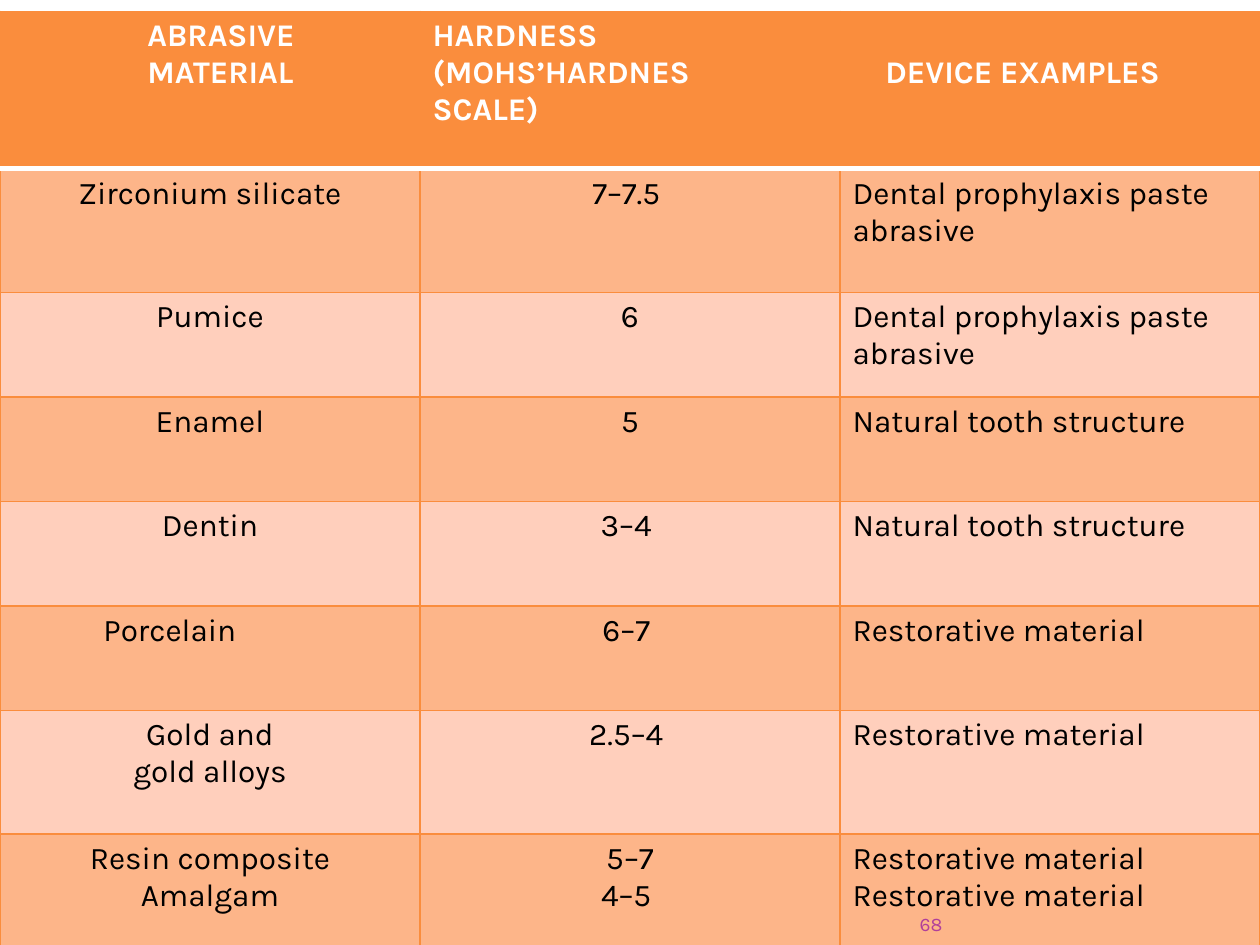
from dataclasses import dataclass

from lxml.etree import SubElement
from pptx import Presentation
from pptx.dml.color import RGBColor
from pptx.enum.text import MSO_ANCHOR, PP_ALIGN
from pptx.oxml.ns import qn
from pptx.util import Inches, Pt


@dataclass(frozen=True)
class Theme:
    font: str = "Karla"
    orange: str = "FA8D3D"
    dark_band: str = "FDB589"
    light_band: str = "FFCFBC"
    white: str = "FFFFFF"
    black: str = "000000"
    purple: str = "B13F9A"
    table_size: float = 18
    number_size: float = 11
    grid_width: float = 0.9
    header_rule: float = 3.15


THEME = Theme()
HEADINGS = ["ABRASIVE\nMATERIAL", "HARDNESS\n(MOHS’HARDNES\nSCALE)", "DEVICE EXAMPLES"]
HEADING_INDENTS = [1.07, 0, 0.26]
PASTE = "Dental prophylaxis paste abrasive"
TOOTH = "Natural tooth structure"
RESTORATIVE = "Restorative material"
MATERIALS = [
    ("Zirconium silicate", "7–7.5 ", PASTE),
    ("Pumice", "6", PASTE),
    ("Enamel", "5", TOOTH),
    ("Dentin", "3–4 ", TOOTH),
    ("Porcelain", "6–7 ", RESTORATIVE),
    ("Gold and\ngold alloys", "2.5–4 ", RESTORATIVE),
    ("Resin composite\nAmalgam", "5–7\n4–5 ", f"{RESTORATIVE}\n{RESTORATIVE}"),
]
ROW_HEIGHTS = [1.25, 0.98, 0.83, 0.83, 0.83, 0.83, 0.98, 0.98]
PORCELAIN_INDENT = 0.72
HEADING_LINE = 0.29


def style_text(text_frame, size, color, bold=False, align=PP_ALIGN.LEFT, indent=0):
    for paragraph in text_frame.paragraphs:
        paragraph.alignment = align
        if indent:
            paragraph._p.get_or_add_pPr().set("marL", str(Inches(indent)))
        for run in paragraph.runs:
            run.font.name = THEME.font
            run.font.size = Pt(size)
            run.font.bold = bold
            run.font.color.rgb = RGBColor.from_string(color)


def draw_borders(cell, row):
    properties = cell._tc.get_or_add_tcPr()
    for side in "LRTB":
        under_header = (row, side) in ((0, "B"), (1, "T"))
        width = THEME.header_rule if under_header else THEME.grid_width
        border = SubElement(properties, qn(f"a:ln{side}"), w=str(Pt(width)))
        fill = SubElement(border, qn("a:solidFill"))
        color = THEME.white if under_header else THEME.orange
        SubElement(fill, qn("a:srgbClr"), val=color)


def fill_cell(cell, row, column, content):
    draw_borders(cell, row)
    cell.fill.solid()
    cell.text_frame.text = content
    if row == 0:
        band = THEME.orange
        style_text(cell.text_frame, THEME.table_size, THEME.white, True,
                   indent=HEADING_INDENTS[column])
        if column == 2:
            cell.margin_top = Inches(0.05 + HEADING_LINE)
    else:
        band = THEME.dark_band if row % 2 else THEME.light_band
        indent = PORCELAIN_INDENT if content == "Porcelain" else 0
        align = PP_ALIGN.LEFT if indent or column == 2 else PP_ALIGN.CENTER
        style_text(cell.text_frame, THEME.table_size, THEME.black, align=align, indent=indent)
    cell.fill.fore_color.rgb = RGBColor.from_string(band)


def add_hardness_table(slide, left, top, width, height):
    rows = [HEADINGS, *MATERIALS]
    table = slide.shapes.add_table(len(rows), len(HEADINGS), left, top, width, height).table
    for column in table.columns:
        column.width = int(width / len(HEADINGS))
    for row, (contents, row_height) in enumerate(zip(rows, ROW_HEIGHTS)):
        table.rows[row].height = Inches(row_height)
        for column, content in enumerate(contents):
            fill_cell(table.cell(row, column), row, column, content)


def add_slide_number(slide, left, top, width, height):
    number = slide.shapes.add_textbox(left, top, width, height).text_frame
    number.margin_left = number.margin_right = number.margin_top = number.margin_bottom = 0
    number.word_wrap = True
    number.vertical_anchor = MSO_ANCHOR.BOTTOM
    number.text = "68"
    style_text(number, THEME.number_size, THEME.purple, align=PP_ALIGN.RIGHT)


def main():
    presentation = Presentation()
    presentation.slide_width = Inches(10)
    presentation.slide_height = Inches(7.5)
    slide = presentation.slides.add_slide(presentation.slide_layouts[6])
    add_hardness_table(slide, 0, Inches(0.09), Inches(10), Inches(sum(ROW_HEIGHTS)))
    add_slide_number(slide, Inches(6.84), Inches(7.17), Inches(0.64), Inches(0.25))
    presentation.save("out.pptx")


if __name__ == "__main__":
    main()
